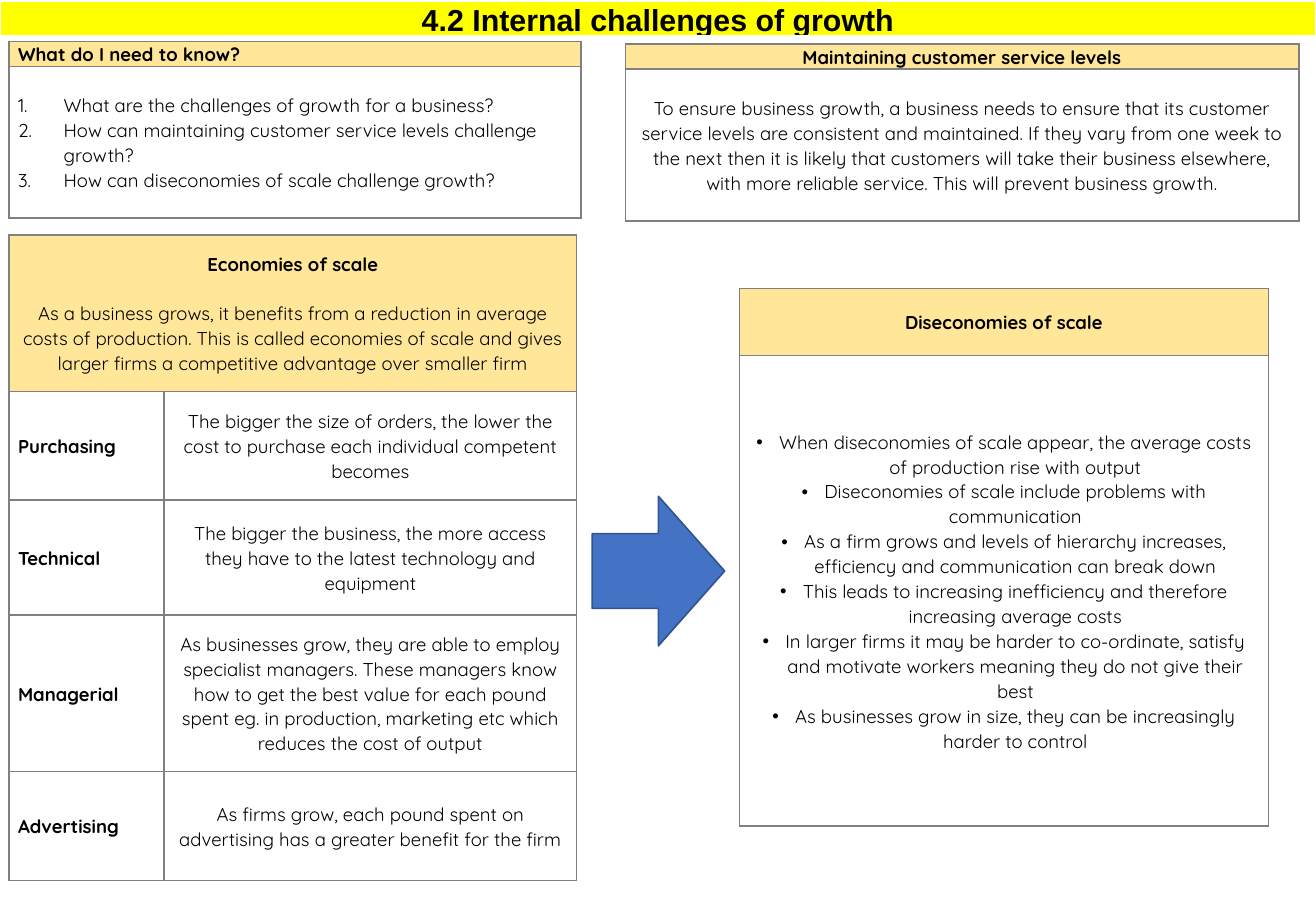
from lxml import etree
from pptx import Presentation
from pptx.dml.color import RGBColor
from pptx.enum.shapes import MSO_SHAPE
from pptx.enum.text import MSO_ANCHOR, PP_ALIGN
from pptx.oxml.ns import qn
from pptx.util import Pt

LEFT, CENTER = PP_ALIGN.LEFT, PP_ALIGN.CENTER
TOP, MIDDLE = MSO_ANCHOR.TOP, MSO_ANCHOR.MIDDLE
RIGHT_ARROW = MSO_SHAPE.RIGHT_ARROW

BLACK = RGBColor(0x00, 0x00, 0x00)
WHITE = RGBColor(0xFF, 0xFF, 0xFF)
GRAY = RGBColor(0x80, 0x80, 0x80)
YELLOW = RGBColor(0xFF, 0xFF, 0x00)
CREAM = RGBColor(0xFF, 0xE6, 0x99)
BLUE = RGBColor(0x44, 0x72, 0xC4)
DARK_BLUE = RGBColor(0x32, 0x54, 0x91)

QUESTIONS = [
    "What are the challenges of growth for a business?",
    "How can maintaining customer service levels challenge growth?",
    "How can diseconomies of scale challenge growth?",
]
SERVICE = (
    "To ensure business growth, a business needs to ensure that its customer service levels "
    "are consistent and maintained. If they vary from one week to the next then it is likely "
    "that customers will take their business elsewhere, with more reliable service. This will "
    "prevent business growth."
)
ECONOMIES_INTRO = (
    "As a business grows, it benefits from a reduction in average costs of production. This is "
    "called economies of scale and gives larger firms a competitive advantage over smaller firm"
)
ECONOMIES = [
    ("Purchasing", "The bigger the size of orders, the lower the cost to purchase each "
                   "individual competent becomes"),
    ("Technical", "The bigger the business, the more access they have to the latest technology "
                  "and equipment"),
    ("Managerial", "As businesses grow, they are able to employ specialist managers. These "
                   "managers know how to get the best value for each pound spent eg. in "
                   "production, marketing etc which reduces the cost of output"),
    ("Advertising", "As firms grow, each pound spent on advertising has a greater benefit for "
                    "the firm"),
]
DISECONOMIES = [
    "When diseconomies of scale appear, the average costs of production rise with output",
    "Diseconomies of scale include problems with communication",
    "As a firm grows and levels of hierarchy increases, efficiency and communication can "
    "break down",
    "This leads to increasing inefficiency and therefore increasing average costs",
    "In larger firms it may be harder to co-ordinate, satisfy and motivate workers meaning "
    "they do not give their best",
    "As businesses grow in size, they can be increasingly harder to control",
]


def write(frame, text, *, font="Quicksand", size=11, bold=False, align=CENTER,
          before=0, marker=None, indent=0):
    """Add one paragraph; marker is "1." for numbering or a bullet character."""
    first = frame.paragraphs[0]
    paragraph = first if not first.runs else frame.add_paragraph()
    paragraph.alignment = align
    paragraph.line_spacing = 1.07
    paragraph.space_before = Pt(before)
    run = paragraph.add_run()
    run.text = text
    run.font.name = font
    run.font.size = Pt(size)
    run.font.bold = bold
    run.font.color.rgb = BLACK
    if marker:
        props = paragraph._p.get_or_add_pPr()
        props.set("marL", str(Pt(indent)))
        props.set("indent", str(-Pt(indent)))
        if marker == "1.":
            etree.SubElement(props, qn("a:buAutoNum"), type="arabicPeriod")
        else:
            etree.SubElement(props, qn("a:buFont"), typeface="Arial")
            etree.SubElement(props, qn("a:buChar"), char=marker)


class Sheet:
    """The current slide and the style of its tables and shapes."""

    def __init__(self, slide):
        self.slide = slide

    def table(self, left, top, columns, rows, border=GRAY, bottom_width=1):
        shape = self.slide.shapes.add_table(
            len(rows), len(columns), Pt(left), Pt(top), Pt(sum(columns)), Pt(sum(rows)))
        table = shape.table
        table.first_row = table.horz_banding = False
        for column, width in zip(table.columns, columns):
            column.width = Pt(width)
        for row, height in zip(table.rows, rows):
            row.height = Pt(height)
        for cell in table.iter_cells():
            self.style_cell(cell, border, bottom_width)
        return table

    def style_cell(self, cell, border, bottom_width):
        cell.margin_left = cell.margin_right = Pt(5.4)
        cell.margin_top = cell.margin_bottom = 0
        cell.vertical_anchor = MIDDLE
        props = cell._tc.get_or_add_tcPr()
        for side in "LRTB":
            width = bottom_width if side == "B" else 1
            line = etree.SubElement(props, qn(f"a:ln{side}"), w=str(Pt(width)))
            fill = etree.SubElement(line, qn("a:solidFill"))
            etree.SubElement(fill, qn("a:srgbClr"), val=str(border))
        cell.fill.background()

    def heading(self, cell, text, color=CREAM, **style):
        cell.fill.solid()
        cell.fill.fore_color.rgb = color
        write(cell.text_frame, text, bold=True, **style)

    def panel(self, left, top, width, rows, title, body, title_align=CENTER, **style):
        """Add a heading row above one cell of paragraphs."""
        table = self.table(left, top, [width], rows)
        self.heading(table.cell(0, 0), title, align=title_align)
        for text in body:
            write(table.cell(1, 0).text_frame, text, **style)

    def arrow(self, left, top, width, height):
        arrow = self.slide.shapes.add_shape(
            RIGHT_ARROW, Pt(left), Pt(top), Pt(width), Pt(height))
        arrow.shadow.inherit = False
        arrow.fill.solid()
        arrow.fill.fore_color.rgb = BLUE
        arrow.line.color.rgb = DARK_BLUE
        arrow.line.width = Pt(1)


def main():
    deck = Presentation()
    deck.slide_width, deck.slide_height = Pt(780), Pt(540)
    sheet = Sheet(deck.slides.add_slide(deck.slide_layouts[6]))

    banner = sheet.table(0, 0.8, [780], [18.4], border=WHITE, bottom_width=3).cell(0, 0)
    banner.vertical_anchor = TOP
    sheet.heading(banner, "4.2 Internal challenges of growth", YELLOW, font="Arial", size=18)

    sheet.panel(5.3, 24.5, 339.2, [14.7, 90], "What do I need to know?", QUESTIONS,
                title_align=LEFT, align=LEFT, marker="1.", indent=27)
    sheet.panel(370.6, 26.2, 399.3, [14.7, 90], "Maintaining customer service levels", [SERVICE])

    economies = sheet.table(5.3, 139.2, [92, 244.6], [92.7, 64.4, 68.2, 93, 64.4])
    intro = economies.cell(0, 0)
    intro.merge(economies.cell(0, 1))
    sheet.heading(intro, "Economies of scale")
    write(intro.text_frame, ECONOMIES_INTRO, before=14.7)
    for row, (kind, benefit) in enumerate(ECONOMIES, start=1):
        write(economies.cell(row, 0).text_frame, kind, bold=True, align=LEFT)
        write(economies.cell(row, 1).text_frame, benefit)

    sheet.arrow(351, 294.2, 78.5, 88.6)
    sheet.panel(438.3, 171, 313.6, [39.7, 279], "Diseconomies of scale", DISECONOMIES,
                marker="•", indent=13.5)

    deck.save("out.pptx")


if __name__ == "__main__":
    main()
